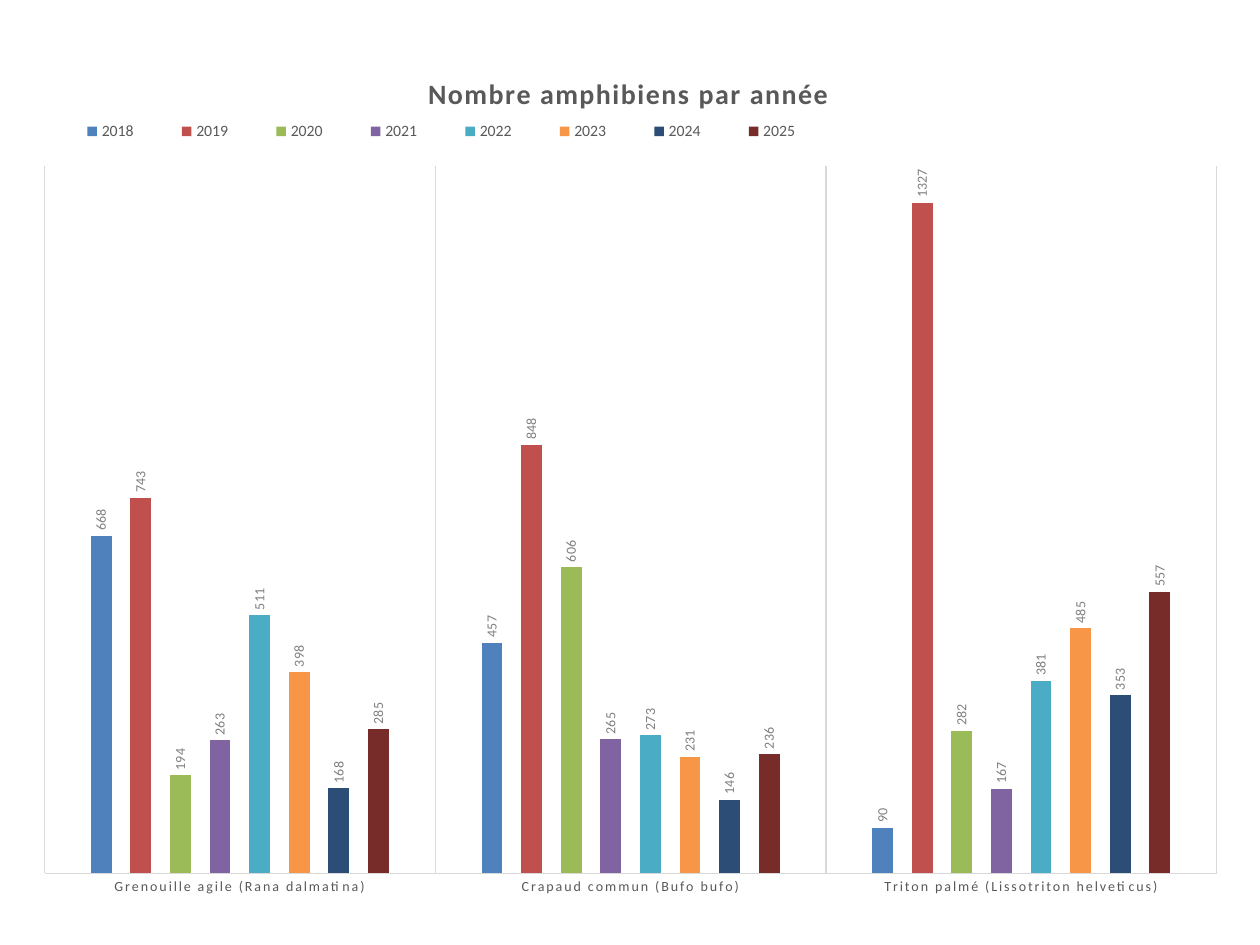
import pptx
import pptx.chart.data
import pptx.dml.color
import pptx.enum.chart
import pptx.oxml
import pptx.oxml.ns
import pptx.util
from dataclasses import dataclass

Inches = pptx.util.Inches
enum = pptx.enum.chart

TITLE = "Nombre amphibiens par année"
SPECIES = [
    "Grenouille agile (Rana dalmatina)",
    "Crapaud commun (Bufo bufo)",
    "Triton palmé (Lissotriton helveticus)",
]
YEARS = [  # year, count per species, colour
    ("2018", (668, 457, 90), "4F81BD"),
    ("2019", (743, 848, 1327), "C0504D"),
    ("2020", (194, 606, 282), "9BBB59"),
    ("2021", (263, 265, 167), "8064A2"),
    ("2022", (511, 273, 381), "4BACC6"),
    ("2023", (398, 231, 485), "F79646"),
    ("2024", (168, 146, 353), "2C4D75"),
    ("2025", (285, 236, 557), "772C2A"),
]


@dataclass
class Theme:
    face: str = "Calibri"
    text: str = "595959"
    label: str = "808080"
    rule: str = "D9D9D9"
    title: int = 16
    base: int = 10
    key: int = 9
    small: int = 8


theme = Theme()


def color(code):
    return pptx.dml.color.RGBColor.from_string(code)


def style(font, size, code, bold=False):
    font.name = theme.face
    font.size = pptx.util.Pt(size)
    font.bold = bold
    font.color.rgb = color(code)


def draw_rule(line):
    line.color.rgb = color(theme.rule)
    line.width = pptx.util.Pt(0.75)


def place(part, index, inner=False, **box):
    """Set a chart part's place as fractions of the chart."""
    old = part.find(pptx.oxml.ns.qn("c:layout"))
    if old is not None:
        part.remove(old)
    modes = '<c:layoutTarget val="inner"/>' if inner else ""
    modes += '<c:xMode val="edge"/><c:yMode val="edge"/>'
    sizes = "".join(f'<c:{k} val="{v}"/>' for k, v in box.items())
    part.insert(index, pptx.oxml.parse_xml(
        f'<c:layout {pptx.oxml.ns.nsdecls("c")}><c:manualLayout>'
        f"{modes}{sizes}</c:manualLayout></c:layout>"))


def add_title(chart):
    frame = chart.chart_title.text_frame
    frame.text = TITLE
    run = frame.paragraphs[0].runs[0]
    style(run.font, theme.title, theme.text, bold=True)
    run.font._element.set("spc", "100")
    place(chart.chart_title._element, 1, x=0.33, y=0.04)


def add_legend(chart):
    chart.has_legend = True
    legend = chart.legend
    legend.position = enum.XL_LEGEND_POSITION.TOP
    legend.include_in_layout = False
    style(legend.font, theme.key, theme.text)
    place(legend._element, 1, x=0.02, y=0.09, w=0.65, h=0.04)


def set_axes(chart):
    axis = chart.category_axis
    axis.major_tick_mark = enum.XL_TICK_MARK.NONE
    axis.has_major_gridlines = True
    draw_rule(axis.major_gridlines.format.line)
    draw_rule(axis.format.line)
    font = axis.tick_labels.font
    style(font, theme.small, theme.text)
    font._element.set("spc", "100")

    scale = chart.value_axis
    scale.minimum_scale, scale.maximum_scale = 0, 1400
    scale.has_major_gridlines = False
    scale.visible = False


def set_bars(chart):
    plot = chart.plots[0]
    plot.gap_width, plot.overlap = 444, -90
    plot.vary_by_categories = False
    for bars, (_, _, code) in zip(plot.series, YEARS):
        bars.format.fill.solid()
        bars.format.fill.fore_color.rgb = color(code)
        labels = bars.data_labels
        labels.show_value = True
        labels.position = enum.XL_LABEL_POSITION.OUTSIDE_END
        style(labels.font, theme.small, theme.label)
        body = next(labels._element.iter(pptx.oxml.ns.qn("a:bodyPr")))
        body.set("rot", "-5400000")
        body.set("vert", "horz")


def main():
    deck = pptx.Presentation()
    deck.slide_width, deck.slide_height = Inches(10), Inches(7.5)
    slide = deck.slides.add_slide(deck.slide_layouts[6])

    data = pptx.chart.data.CategoryChartData()
    data.categories = SPECIES
    for year, counts, _ in YEARS:
        data.add_series(year, counts)
    chart = slide.shapes.add_chart(
        enum.XL_CHART_TYPE.COLUMN_CLUSTERED,
        Inches(0.16), Inches(0.28), Inches(9.69), Inches(6.93), data).chart
    style(chart.font, theme.base, "000000")

    add_title(chart)
    add_legend(chart)
    set_axes(chart)
    set_bars(chart)
    area = chart._chartSpace.chart.plotArea
    place(area, 0, inner=True, x=0.02, y=0.15, w=0.96, h=0.81)
    deck.save("out.pptx")


if __name__ == "__main__":
    main()
